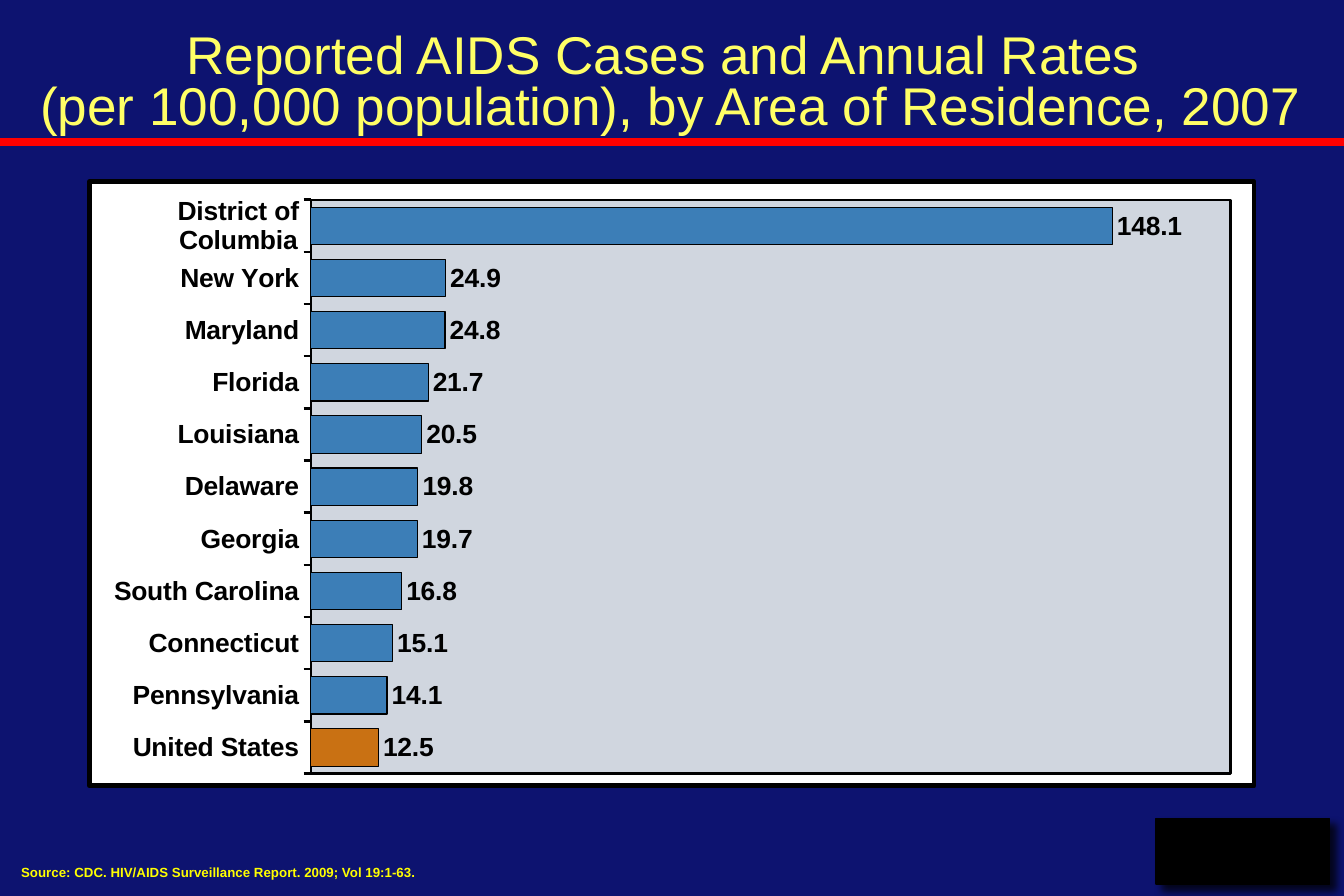
from pptx import Presentation
from pptx.chart.data import CategoryChartData as ChartData
from pptx.dml.color import RGBColor as RGB
from pptx.enum.chart import XL_CHART_TYPE as Kind, XL_LABEL_POSITION as Pos, XL_TICK_MARK as Tick
from pptx.enum.shapes import MSO_CONNECTOR as Conn, MSO_SHAPE as Shape
from pptx.enum.text import MSO_ANCHOR as Anchor, MSO_AUTO_SIZE as Fit, PP_ALIGN as Align
from pptx.oxml import parse_xml
from pptx.oxml.ns import nsdecls, qn
from pptx.util import Cm, Pt

# Content
TITLE = ("Reported AIDS Cases and Annual Rates \v"
         "(per 100,000 population), by Area of Residence, 2007")
SOURCE = "Source: CDC. HIV/AIDS Surveillance Report. 2009; Vol 19:1-63."
RATES = [
    ("District of Columbia", 148.1),
    ("New York", 24.9),
    ("Maryland", 24.8),
    ("Florida", 21.7),
    ("Louisiana", 20.5),
    ("Delaware", 19.8),
    ("Georgia", 19.7),
    ("South Carolina", 16.8),
    ("Connecticut", 15.1),
    ("Pennsylvania", 14.1),
    ("United States", 12.5),
]
COLORS = {"back": "0D1370", "title": "FFFF66", "source": "FFFF00", "rule": "FF0000",
          "ink": "000000", "paper": "FFFFFF", "plot": "D0D6DF",
          "state": "3C7EB7", "nation": "C97113"}
FONT = "Arial"
INNER = {"x": 0.19, "y": 0.03, "w": 0.79, "h": 0.95}


def color(name):
    return RGB.from_string(COLORS[name])


def paint(part, fill, width):
    part.fill.solid()
    part.fill.fore_color.rgb = color(fill)
    part.line.color.rgb = color("ink")
    part.line.width = Pt(width)


def style(font, size, name, bold=False):
    font.name, font.size, font.bold = FONT, Pt(size), bold
    font.color.rgb = color(name)


def area(fill, width):
    return parse_xml(
        f'<c:spPr {nsdecls("c", "a")}><a:solidFill><a:srgbClr val="{COLORS[fill]}"/></a:solidFill>'
        f'<a:ln w="{Pt(width)}"><a:solidFill><a:srgbClr val="{COLORS["ink"]}"/></a:solidFill>'
        '</a:ln></c:spPr>')


# Slide
deck = Presentation()
deck.slide_width, deck.slide_height = Cm(28.58), Cm(19.05)
slide = deck.slides.add_slide(deck.slide_layouts[5])
slide.background.fill.solid()
slide.background.fill.fore_color.rgb = color("back")
shapes = slide.shapes

# Corner block with soft shadow
block = shapes.add_shape(Shape.RECTANGLE, Cm(24.59), Cm(17.4), Cm(3.68), Cm(1.4))
paint(block, "ink", 1)
block.shadow.inherit = False
glow = block._element.spPr.find(qn("a:effectLst"))
glow.append(parse_xml(
    f'<a:outerShdw {nsdecls("a")} blurRad="{Pt(5)}" dist="{Pt(5)}" dir="2700000">'
    f'<a:srgbClr val="{COLORS["ink"]}"><a:alpha val="75000"/></a:srgbClr></a:outerShdw>'))

# Title
title = shapes.title
title.left, title.top, title.width, title.height = Cm(0.2), Cm(0.56), Cm(28.14), Cm(2.49)
frame = title.text_frame
frame.text = TITLE
frame.auto_size, frame.vertical_anchor = Fit.NONE, Anchor.MIDDLE
para = frame.paragraphs[0]
para.alignment, para.line_spacing = Align.CENTER, 0.8
for run in para.runs:
    style(run.font, 32, "title")

# Source line
note = shapes.add_textbox(Cm(0.2), Cm(18.05), Cm(16.2), Cm(1)).text_frame
note.text = SOURCE
note.word_wrap, note.vertical_anchor = True, Anchor.MIDDLE
style(note.paragraphs[0].runs[0].font, 8, "source", True)

# Red rule
rule = shapes.add_connector(Conn.STRAIGHT, 0, Cm(3.02), deck.slide_width, Cm(3.02))
rule.line.color.rgb = color("rule")
rule.line.width = Pt(5)
rule._element.spPr.append(parse_xml(f'<a:effectLst {nsdecls("a")}/>'))

# Chart: bars run from the bottom up
data = ChartData(number_format="0.0")
data.categories = [place for place, rate in reversed(RATES)]
data.add_series("Series 1", [rate for place, rate in reversed(RATES)])
chart = shapes.add_chart(Kind.BAR_CLUSTERED, Cm(1.85), Cm(3.81), Cm(24.87), Cm(12.95), data).chart
chart.has_legend = chart.has_title = False
style(chart.font, 18, "ink")

# Bars and labels
plot = chart.plots[0]
plot.gap_width, plot.vary_by_categories = 40, False
bars = plot.series[0]
paint(bars.format, "state", 0.75)
paint(bars.points[0].format, "nation", 0.75)
labels = bars.data_labels
labels.show_value, labels.position = True, Pos.OUTSIDE_END
labels.number_format, labels.number_format_is_linked = "0.0", False
style(labels.font, 16, "ink", True)

# Axes
places, scale = chart.category_axis, chart.value_axis
places.major_tick_mark = Tick.OUTSIDE
places.format.line.color.rgb = color("ink")
places.format.line.width = Pt(1.5)
style(places.tick_labels.font, 16, "ink", True)
scale.minimum_scale, scale.maximum_scale, scale.major_unit = 0, 170, 30
scale.has_major_gridlines = scale.visible = False

# Chart frame and plot area
root = chart._chartSpace.find(qn("c:chart"))
root.addnext(area("paper", 3))
field = root.find(qn("c:plotArea"))
field.append(area("plot", 1.5))
for old in field.findall(qn("c:layout")):
    field.remove(old)
sizes = "".join(f'<c:{key} val="{part}"/>' for key, part in INNER.items())
field.insert(0, parse_xml(
    f'<c:layout {nsdecls("c")}><c:manualLayout><c:layoutTarget val="inner"/>'
    f'<c:xMode val="edge"/><c:yMode val="edge"/>{sizes}</c:manualLayout></c:layout>'))

deck.save("out.pptx")
